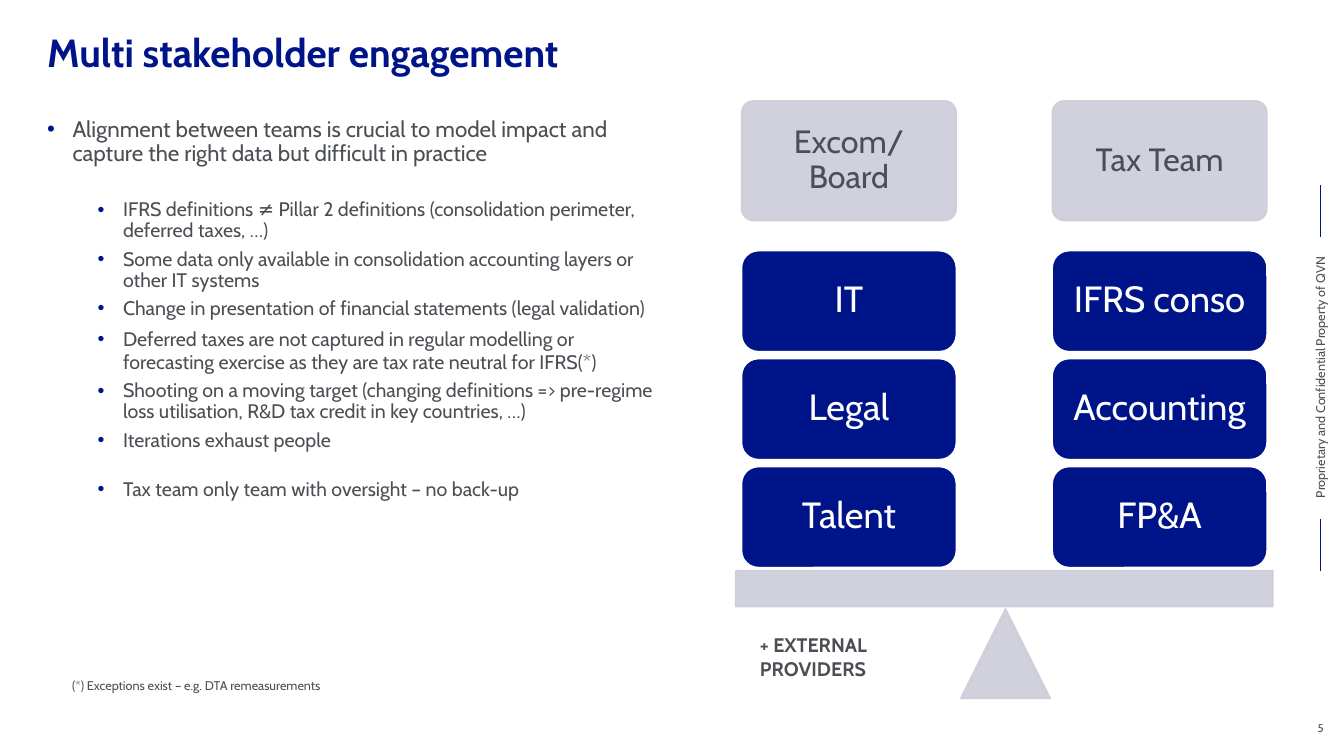
from lxml.etree import SubElement
from pptx import Presentation
from pptx.dml.color import RGBColor
from pptx.enum.shapes import MSO_CONNECTOR, MSO_SHAPE as SHAPE
from pptx.enum.text import MSO_ANCHOR as ANCHOR, MSO_AUTO_SIZE, PP_ALIGN as ALIGN
from pptx.oxml.ns import qn
from pptx.util import Cm, Pt

NAVY, GREY, TEXT, WHITE = "001489", "CCCCDA", "4B4F54", "FFFFFF"
color_of = RGBColor.from_string


def write(paragraph, text, size, color=TEXT, bold=False, **layout):
    """Fill a paragraph with one run; layout holds paragraph attributes."""
    run = paragraph.add_run()
    run.text = text
    for name, value in dict(name="Cabin", size=Pt(size), bold=bold).items():
        setattr(run.font, name, value)
    run.font.color.rgb = color_of(color)
    for name, value in layout.items():
        setattr(paragraph, name, value)


def add_block(kind, left, top, width, height, fill, line, opacity=100):
    block = slide.shapes.add_shape(kind, Cm(left), Cm(top), Cm(width), Cm(height))
    block.shadow.inherit = False
    block.fill.solid()
    block.fill.fore_color.rgb = color_of(fill)
    block.line.color.rgb = color_of(line)
    block.line.width = Pt(1)
    if opacity < 100:
        for color in block._element.spPr.iter(qn("a:srgbClr")):
            SubElement(color, qn("a:alpha"), val=str(opacity * 1000))
    return block


presentation = Presentation()
presentation.slide_width, presentation.slide_height = Cm(33.87), Cm(19.05)
slide = presentation.slides.add_slide(presentation.slide_layouts[1])

# Title and body placeholders
title, body = slide.placeholders
for placeholder, box in ((title, (1.19, 0.71, 31.5, 1.35)),
                         (body, (1.19, 2.84, 15.42, 13.41))):
    for name, value in zip(("left", "top", "width", "height"), box):
        setattr(placeholder, name, Cm(value))
    frame_format = dict(margin_left=0, margin_right=Cm(0.1), margin_top=Cm(0.13),
                        margin_bottom=Cm(0.13), word_wrap=True,
                        auto_size=MSO_AUTO_SIZE.NONE)
    for name, value in frame_format.items():
        setattr(placeholder.text_frame, name, value)

write(title.text_frame.paragraphs[0], "Multi stakeholder engagement", 28, NAVY, True,
      alignment=ALIGN.LEFT, line_spacing=0.9)

# level, space before, line spacing, text
bullets = [
    (0, 0, 0.9, "Alignment between teams is crucial to model impact and capture "
                "the right data but difficult in practice"),
    (1, 24, 0.9, "IFRS definitions ≠ Pillar 2 definitions (consolidation perimeter, "
                 "deferred taxes, …)"),
    (1, 5, 0.9, "Some data only available in consolidation accounting layers or "
                "other IT systems"),
    (1, 5, 0.9, "Change in presentation of financial statements (legal validation)"),
    (1, 5, 1.0, "Deferred taxes are not captured in regular modelling or forecasting "
                "exercise as they are tax rate neutral for IFRS(*)"),
    (1, 5, 0.9, "Shooting on a moving target (changing definitions => pre-regime loss "
                "utilisation, R&D tax credit in key countries, …)"),
    (1, 5, 0.9, "Iterations exhaust people"),
    (1, 20, 0.9, "Tax team only team with oversight – no back-up"),
]
for index, (level, before, spacing, text) in enumerate(bullets):
    frame = body.text_frame
    paragraph = frame.add_paragraph() if index else frame.paragraphs[0]
    properties = paragraph._p.get_or_add_pPr()
    properties.set("marL", str(Cm(1.91 if level else 0.64)))
    properties.set("indent", str(-Cm(0.64)))
    SubElement(SubElement(properties, qn("a:buClr")), qn("a:srgbClr"), val=NAVY)
    SubElement(properties, qn("a:buFont"), typeface="Arial")
    SubElement(properties, qn("a:buChar"), char="•")
    write(paragraph, text, 14 if level else 16, level=level, alignment=ALIGN.LEFT,
          space_before=Pt(before), space_after=Pt(0), line_spacing=spacing)

# Scale: beam, pivot and two stacks of teams
add_block(SHAPE.ISOSCELES_TRIANGLE, 24.21, 15.34, 2.26, 2.26, GREY, GREY, 90)
add_block(SHAPE.RECTANGLE, 18.54, 14.38, 13.54, 0.91, GREY, GREY, 90)

stacks = [(18.69, "Excom/Board", ("IT", "Legal", "Talent")),
          (26.52, "Tax Team", ("IFRS conso", "Accounting", "FP&A"))]
for left, head, teams in stacks:
    head_block = add_block(SHAPE.ROUNDED_RECTANGLE, left, 2.54, 5.41, 3.02, GREY, GREY, 90)
    head_block.adjustments[0] = 0.1
    labels = [(head_block, head, 23, TEXT, 0.36)]
    for row, team in enumerate(teams):
        team_block = add_block(SHAPE.ROUNDED_RECTANGLE, left, 6.32 + row * 2.72,
                               5.41, 2.54, NAVY, WHITE)
        labels.append((team_block, team, 26, WHITE, 0.39))
    for block, text, size, color, margin in labels:
        frame = block.text_frame
        for side in ("left", "right", "top", "bottom"):
            setattr(frame, f"margin_{side}", Cm(margin))
        frame.word_wrap = True
        frame.vertical_anchor = ANCHOR.MIDDLE
        write(frame.paragraphs[0], text, size, color,
              alignment=ALIGN.CENTER, line_spacing=0.9)

# Notes and page furniture: box, rotation, anchor, margins, text, size, bold, alignment
notes = [
    ((1.57, 16.94, 18.64, 0.64), 0, ANCHOR.TOP, (0.25, 0.13),
     "(*) Exceptions exist – e.g. DTA remeasurements", 9, False, ALIGN.LEFT),
    ((18.9, 15.82, 5.26, 1.45), 0, ANCHOR.TOP, (0.25, 0.13),
     "+ EXTERNAL PROVIDERS", 14, True, ALIGN.LEFT),
    ((29.08, 9.19, 8.38, 0.64), 270, ANCHOR.MIDDLE, (0.25, 0.13),
     "Proprietary and Confidential Property of QVN", 9, False, ALIGN.CENTER),
    ((32.69, 18.19, 1.18, 0.33), 0, ANCHOR.BOTTOM, (0, 0),
     "5", 8, False, ALIGN.CENTER),
]
for box, rotation, anchor, (side, edge), text, size, bold, alignment in notes:
    note = slide.shapes.add_textbox(*map(Cm, box))
    note.rotation = rotation
    frame_format = dict(word_wrap=True, vertical_anchor=anchor,
                        margin_left=Cm(side), margin_right=Cm(side),
                        margin_top=Cm(edge), margin_bottom=Cm(edge))
    for name, value in frame_format.items():
        setattr(note.text_frame, name, value)
    write(note.text_frame.paragraphs[0], text, size, bold=bold, alignment=alignment)

for top in (4.67, 13.08):
    rule = slide.shapes.add_connector(MSO_CONNECTOR.STRAIGHT, Cm(33.27), Cm(top),
                                      Cm(33.27), Cm(top + 1.31))
    rule.line.color.rgb = color_of(NAVY)
    rule.line.width = Pt(0.5)
    SubElement(rule._element.spPr, qn("a:effectLst"))

presentation.save("out.pptx")
